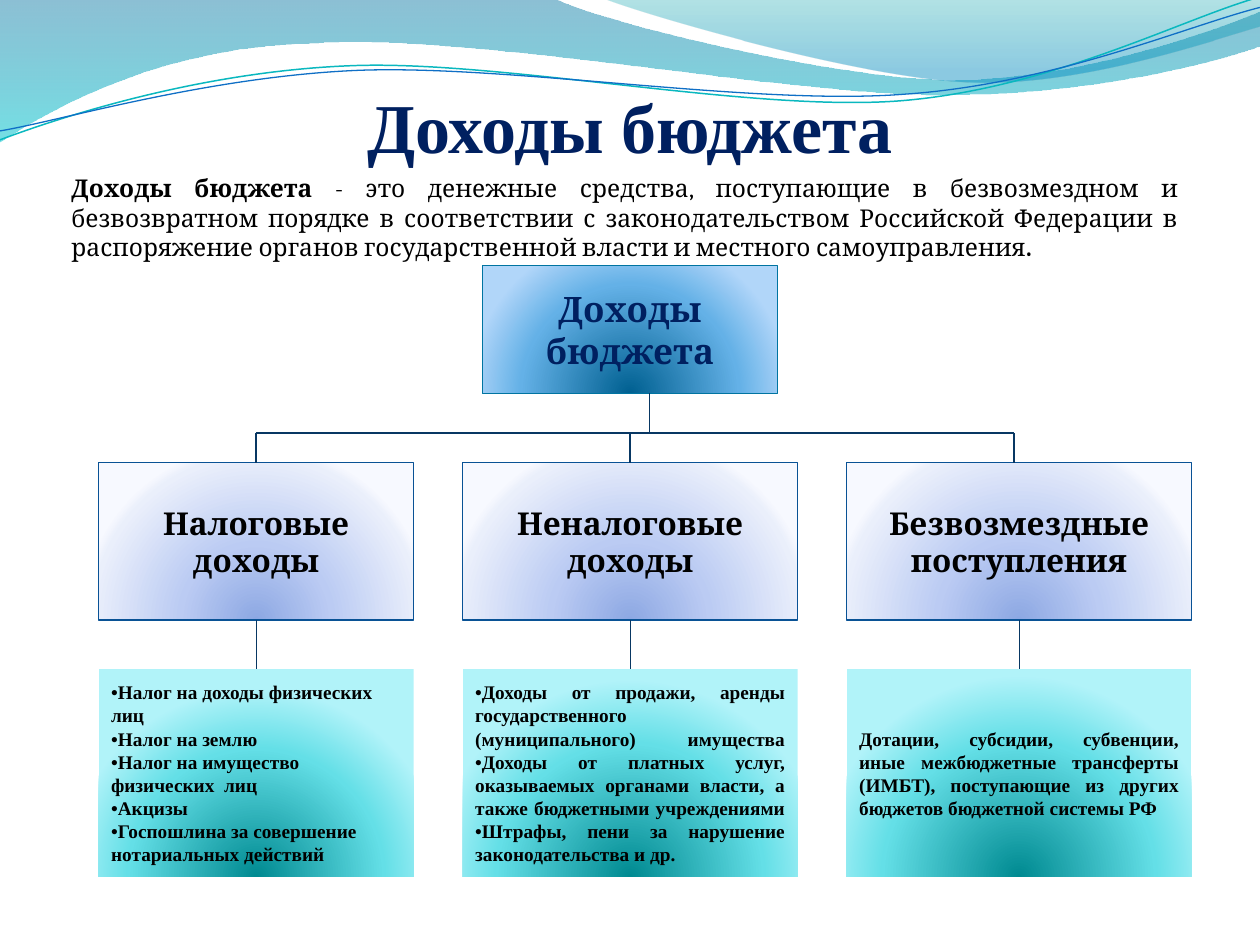
"""Build a slide on budget revenues: a wave header and a three-branch chart."""
from lxml import etree
from pptx import Presentation
from pptx.dml.color import RGBColor
from pptx.enum.shapes import MSO_CONNECTOR, MSO_SHAPE
from pptx.enum.text import MSO_ANCHOR, PP_ALIGN
from pptx.oxml import parse_xml
from pptx.oxml.ns import nsdecls, qn
from pptx.util import Cm, Pt

RECT = MSO_SHAPE.RECTANGLE
LINE = MSO_CONNECTOR.STRAIGHT
TOP, MID, LOW = MSO_ANCHOR.TOP, MSO_ANCHOR.MIDDLE, MSO_ANCHOR.BOTTOM
LEFT, MIDST, FULL = PP_ALIGN.LEFT, PP_ALIGN.CENTER, PP_ALIGN.JUSTIFY

RADIAL = '<a:path path="circle"><a:fillToRect l="50000" t="130000" r="50000" b="-30000"/></a:path>'
DOWN = '<a:lin ang="5400000" scaled="0"/>'
SERIF, TIMES = "Cambria", "Times New Roman"
THEME = {
    "title": {"name": TIMES, "size": Pt(40), "ink": "002060"},
    "intro": {"name": SERIF, "size": Pt(14), "ink": "000000"},
    "root": {"name": SERIF, "size": Pt(20), "ink": "002060"},
    "kind": {"name": SERIF, "size": Pt(18), "ink": "000000"},
    "note": {"name": TIMES, "size": Pt(11), "ink": "000000"},
    "blue": [(0, "006091", 100), (68, "64B1E7", 100), (100, "B1D6F9", 100)],
    "pale": [(0, "8DA8E3", 100), (43, "BBCBF3", 100), (93, "EAEFFB", 100), (100, "F7F9FF", 100)],
    "teal": [(0, "008A91", 100), (68, "64DFE7", 100), (100, "B1F3F9", 100)],
    "back": [(0, "0074A1", 45), (100, "00C6CF", 55)],
    "front": [(0, "00A1A9", 30), (80, "008BBF", 45)],
    "upper": "0AB8BF",
    "lower": "0F6FC6",
    "root edge": "0074A1",
    "kind edge": "095295",
    "link": "083763",
    "thin": Pt(0.75),
}


def paint(shape, stops, path):
    """Give a shape a gradient fill and no shadow."""
    marks = "".join(
        f'<a:gs pos="{pos * 1000}"><a:srgbClr val="{hue}"><a:alpha val="{alpha * 1000}"/></a:srgbClr></a:gs>'
        for pos, hue, alpha in stops)
    shape.fill.solid()
    props = shape.element.spPr
    grad = parse_xml(f'<a:gradFill {nsdecls("a")} rotWithShape="1"><a:gsLst>{marks}</a:gsLst>{path}</a:gradFill>')
    props.replace(props.find(qn("a:solidFill")), grad)
    shape.shadow.inherit = False


def write(frame, paras, style, align, anchor):
    """Fill a frame; the runs of each paragraph alternate bold and plain."""
    frame.word_wrap = True
    frame.vertical_anchor = anchor
    for i, parts in enumerate(paras):
        para = frame.add_paragraph() if i else frame.paragraphs[0]
        para.alignment = align
        for j, part in enumerate(parts):
            run = para.add_run()
            run.text = part
            look = {**THEME[style], "bold": j % 2 == 0}
            run.font.color.rgb = RGBColor.from_string(look.pop("ink"))
            for key, value in look.items():
                setattr(run.font, key, value)


deck = Presentation()
deck.slide_width, deck.slide_height = Cm(25.4), Cm(19.05)
slide = deck.slides.add_slide(deck.slide_layouts[5])
shapes = slide.shapes

TURN = 357.3
waves = [
    ("back", None, 0, [
        (0, 0), (11.18, -0.03),
        (12.09, 0.43, 16.87, 1.6, 19.25, 1.6),
        (21.67, 1.6, 24.33, 0.66, 25.4, 0.23), (25.43, 0.91),
        (24.97, 1.12, 22.1, 1.93, 18.95, 1.91),
        (15.8, 1.91, 9.7, 0.71, 6.53, 0.86),
        (3.28, 0.91, 1.17, 2.11, -0.03, 2.87)]),
    ("front", None, 0, [
        (12.17, -0.03),
        (12.93, 0.28, 17.32, 1.57, 19.53, 1.65),
        (21.74, 1.75, 24.41, 0.81, 25.4, 0.53), (25.4, 0)]),
    (None, "upper", 0.85, [
        (-0.05, 2.22),
        (1.19, 1.82, 4.02, 1.04, 7.05, 1.06),
        (10.05, 1.07, 15.02, 2.37, 18.08, 2.29),
        (21.13, 2.2, 23.86, 0.91, 25.41, 0.55)]),
    (None, "lower", 0.75, [
        (-0.04, 2.04),
        (1.16, 1.9, 4.17, 1.15, 7.2, 1.16),
        (10.25, 1.18, 15.13, 2.25, 18.19, 2.16),
        (21.22, 2.1, 23.93, 1.06, 25.45, 0.75)]),
]
for stops, hue, width, parts in waves:
    spots = [(Cm(part[i]), Cm(part[i + 1])) for part in parts for i in range(0, len(part), 2)]
    pen = shapes.build_freeform(*spots[0])
    pen.add_line_segments(spots[1:], close=bool(stops))
    wave = pen.convert_to_shape()
    steps = iter(list(wave.element.iter(qn("a:lnTo"))))
    for part in parts[1:]:
        step = next(steps)
        if len(part) == 6:
            step.tag = qn("a:cubicBezTo")
            for spare in (next(steps), next(steps)):
                step.append(spare[0])
                spare.getparent().remove(spare)
    if stops:
        paint(wave, THEME[stops], DOWN)
        wave.line.fill.background()
    else:
        wave.rotation = TURN
        wave.fill.background()
        wave.shadow.inherit = False
        wave.line.color.rgb = RGBColor.from_string(THEME[hue])
        wave.line.width = Pt(width)

title = shapes.title
shapes.element.append(title.element)
place = {"left": Cm(1.27), "top": Cm(0.76), "width": Cm(22.86), "height": Cm(2.62)}
for key, value in place.items():
    setattr(title, key, value)
inset = {"margin_left": 0, "margin_top": Cm(0.13), "margin_right": 0, "margin_bottom": 0}
for key, value in inset.items():
    setattr(title.text_frame, key, value)
write(title.text_frame, [["Доходы бюджета"]], "title", MIDST, LOW)

intro = shapes.add_textbox(Cm(1.19), Cm(3.37), Cm(22.82), Cm(2.06))
write(intro.text_frame, [[
    "Доходы бюджета ",
    "- это денежные средства, поступающие в безвозмездном и безвозвратном порядке "
    "в соответствии с законодательством Российской Федерации в распоряжение органов "
    "государственной власти и местного самоуправления",
    "."]], "intro", FULL, TOP)

ROOT_TOP, ROOT_TALL = 5.35, 2.58
KIND_TOP, KIND_TALL = 9.33, 3.17
NOTE_TOP, NOTE_TALL = 13.49, 4.19
BUS = 8.73
boxes = [(9.73, ROOT_TOP, 5.94, ROOT_TALL, "blue", "root edge", "root", MIDST, ["Доходы бюджета"])]
columns = [
    (9.33, 6.75, "Неналоговые доходы", FULL, [
        "•Доходы от продажи, аренды государственного (муниципального) имущества "
        "•Доходы от платных услуг, оказываемых органами власти, а также бюджетными учреждениями ",
        "•Штрафы, пени за нарушение законодательства и др."]),
    (1.99, 6.35, "Налоговые доходы", LEFT, [
        "•Налог на доходы физических лиц",
        "•Налог на землю",
        "•Налог на имущество физических  лиц",
        "•Акцизы",
        "•Госпошлина за совершение нотариальных действий"]),
    (17.07, 6.95, "Безвозмездные поступления", FULL, [
        "Дотации, субсидии, субвенции, иные межбюджетные трансферты (ИМБТ), "
        "поступающие из других бюджетов бюджетной системы РФ "]),
]
drops = [5.16, 12.7, 20.44]
links = [(drops[0], BUS, drops[-1], BUS)]
links += [(x, BUS, x, KIND_TOP) for x in drops]
links.append((13.1, ROOT_TOP + ROOT_TALL, 13.1, BUS))
for left, width, head, align, notes in columns:
    boxes.append((left, KIND_TOP, width, KIND_TALL, "pale", "kind edge", "kind", MIDST, [head]))
    boxes.append((left, NOTE_TOP, width, NOTE_TALL, "teal", None, "note", align, notes))
    mid = left + width / 2
    links.append((mid, KIND_TOP + KIND_TALL, mid, NOTE_TOP))

for left, top, width, tall, stops, edge, style, align, lines in boxes:
    box = shapes.add_shape(RECT, Cm(left), Cm(top), Cm(width), Cm(tall))
    paint(box, THEME[stops], RADIAL)
    if edge:
        box.line.color.rgb = RGBColor.from_string(THEME[edge])
        box.line.width = THEME["thin"]
    else:
        box.line.fill.background()
    write(box.text_frame, [[line] for line in lines], style, align, MID)

for ends in links:
    link = shapes.add_connector(LINE, *(Cm(end) for end in ends))
    link.line.color.rgb = RGBColor.from_string(THEME["link"])
    link.line.width = THEME["thin"]
    etree.SubElement(link.element.spPr, qn("a:effectLst"))

deck.save("out.pptx")
